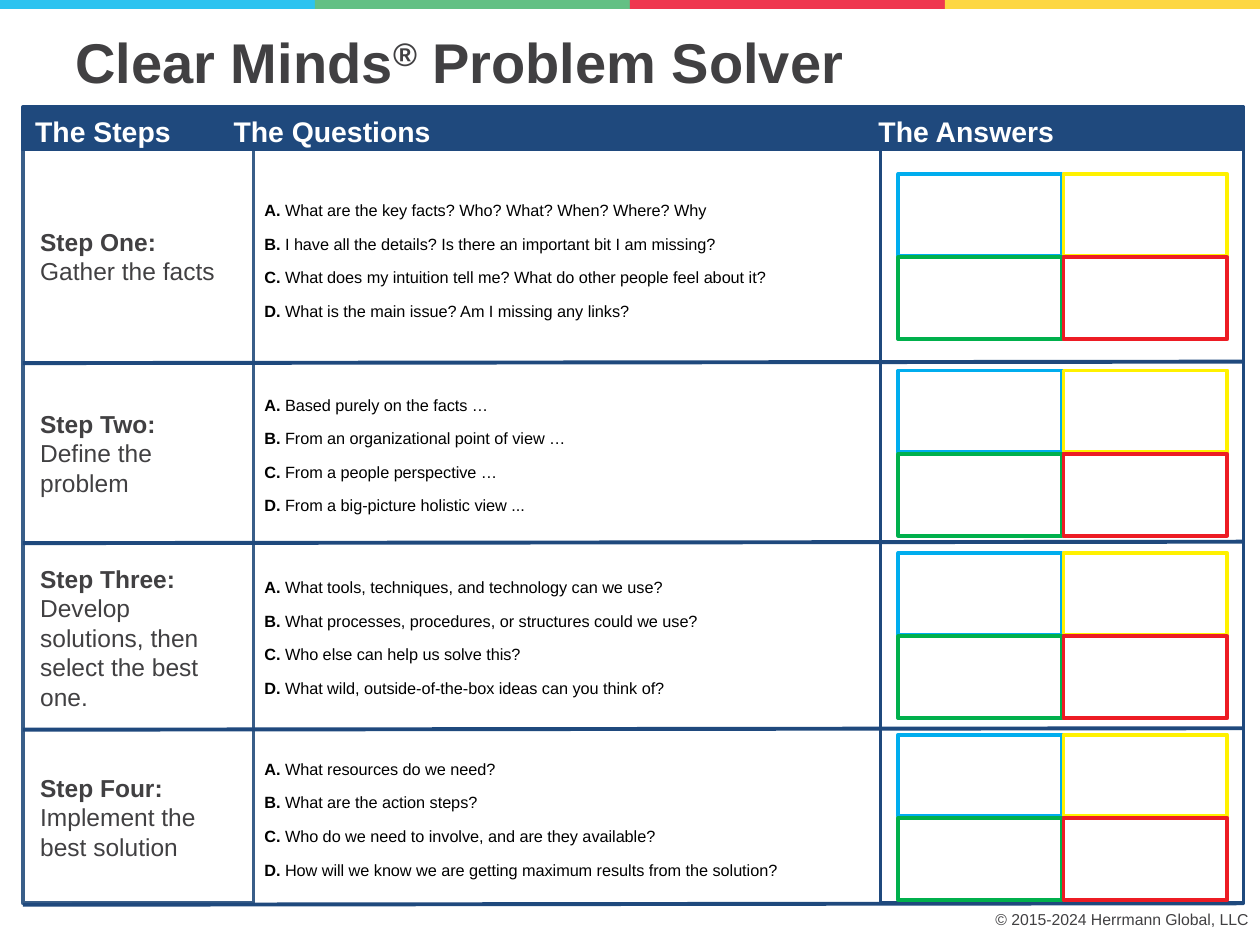
from dataclasses import dataclass
from lxml.etree import SubElement
from pptx import Presentation
from pptx.dml.color import RGBColor
from pptx.enum.shapes import MSO_CONNECTOR, MSO_SHAPE
from pptx.enum.text import MSO_ANCHOR, PP_ALIGN
from pptx.oxml.ns import qn
from pptx.util import Cm, Pt


@dataclass(frozen=True)
class Theme:
    font: str = "Arial"
    navy: str = "1F497D"
    steel: str = "395E89"
    grey: str = "414042"
    black: str = "000000"
    white: str = "FFFFFF"
    bands: tuple = ("2CC3F0", "63C084", "EF374F", "FDD742")
    quads: tuple = ("00ADEE", "FFF100", "00B04C", "ED1C24")
    title: int = 32
    head: int = 28
    ask: int = 16
    step: int = 14
    foot: int = 9
    edge: float = 2
    rule: float = 2.25


STEPS = [
    dict(name="Step One:", goal="Gather the facts",
         cell=(3.05, 4.45, 4.24), ask=(3.94, 2.77), quad=3.51, rule=7.32,
         asks=["What are the key facts? Who? What? When? Where? Why",
               "I have all the details? Is there an important bit I am missing?",
               "What does my intuition tell me? What do other people feel about it?",
               "What is the main issue? Am I missing any links?"]),
    dict(name="Step Two:", goal="Define the problem",
         cell=(7.32, 4.45, 3.63), ask=(7.75, 3), quad=7.47, rule=10.95,
         asks=["Based purely on the facts …",
               "From an organizational point of view …",
               "From a people perspective …",
               "From a big-picture holistic view ..."]),
    dict(name="Step Three:", goal="Develop solutions, then select the best one.",
         cell=(10.92, 4.45, 3.86), ask=(11.43, 3), quad=11.15, rule=14.71,
         asks=["What tools, techniques, and technology can we use?",
               "What processes, procedures, or structures could we use?",
               "Who else can help us solve this?",
               "What wild, outside-of-the-box ideas can you think of?"]),
    dict(name="Step Four:", goal="Implement the best solution",
         cell=(14.73, 4.29, 3.48), ask=(15.09, 3), quad=14.81, rule=18.24,
         asks=["What resources do we need?",
               "What are the action steps?",
               "Who do we need to involve, and are they available?",
               "How will we know we are getting maximum results from the solution?"]),
]


def write(text, para, size, color, font, bold=False, base=0):
    run = para.add_run()
    run.text = text
    run.font.size = Pt(size)
    run.font.name = font
    run.font.bold = bold
    run.font.color.rgb = RGBColor.from_string(color)
    if base:
        run.font._element.set("baseline", str(base * 1000))


class Board:
    """Draw themed elements on the current slide."""

    def __init__(self, slide, theme):
        self.slide = slide
        self.theme = theme

    def rect(self, x, y, w, h, fill, line=None, width=0):
        box = self.slide.shapes.add_shape(
            MSO_SHAPE.RECTANGLE, Cm(x), Cm(y), Cm(w), Cm(h))
        box.shadow.inherit = False
        box.fill.solid()
        box.fill.fore_color.rgb = RGBColor.from_string(fill)
        if line:
            box.line.color.rgb = RGBColor.from_string(line)
            box.line.width = Pt(width)
        else:
            box.line.fill.background()

    def rule(self, x, y, end, rise):
        line = self.slide.shapes.add_connector(
            MSO_CONNECTOR.STRAIGHT, Cm(x), Cm(y), Cm(end), Cm(y - rise))
        line.line.color.rgb = RGBColor.from_string(self.theme.navy)
        line.line.width = Pt(self.theme.rule)
        SubElement(line._element.spPr, qn("a:effectLst"))

    def text(self, x, y, w, h, lines, size, color, anchor=MSO_ANCHOR.TOP,
             align=PP_ALIGN.LEFT, pad=(0.25, 0.13), tabs=()):
        frame = self.slide.shapes.add_textbox(Cm(x), Cm(y), Cm(w), Cm(h)).text_frame
        frame.word_wrap = True
        frame.vertical_anchor = anchor
        frame.margin_left = frame.margin_right = Cm(pad[0])
        frame.margin_top = frame.margin_bottom = Cm(pad[1])
        for i, line in enumerate(lines):
            para = frame.add_paragraph() if i else frame.paragraphs[0]
            para.alignment = align
            if tabs:
                stops = SubElement(para._p.get_or_add_pPr(), qn("a:tabLst"))
                for tab in tabs:
                    SubElement(stops, qn("a:tab"), pos=str(Cm(tab)), algn="l")
            for text, bold, base in line:
                write(text, para=para, size=size, color=color,
                      font=self.theme.font, bold=bold, base=base)

    def quad(self, x, y):
        for i, color in enumerate(self.theme.quads):
            row, col = divmod(i, 2)
            self.rect(x + col * 3.33, y + row * 1.68, 3.3, 1.65,
                      self.theme.white, color, self.theme.rule)


def main():
    theme = Theme()
    deck = Presentation()
    deck.slide_width, deck.slide_height = Cm(25.4), Cm(19.05)
    board = Board(deck.slides.add_slide(deck.slide_layouts[6]), theme)

    for i, color in enumerate(theme.bands):
        board.rect(i * 6.35, 0, 6.35, 0.18, color)
    board.text(19.33, 18.24, 6.07, 0.61,
               [[("© 2015-2024 Herrmann Global, LLC", False, 0)]],
               theme.foot, theme.grey, align=PP_ALIGN.RIGHT, pad=(0.23, 0.1))
    board.rect(0.46, 2.21, 4.65, 16, theme.white, theme.steel, theme.edge)
    board.rect(17.75, 2.21, 7.32, 16, theme.white, theme.navy, theme.edge)
    board.text(1.27, 0.43, 22.86, 2.36,
               [[("Clear Minds", True, 0), ("®", True, 30),
                 (" Problem Solver", True, 0)]], theme.title, theme.grey)
    board.rect(0.46, 2.16, 24.61, 0.86, theme.navy, theme.navy, theme.edge)
    board.text(0.46, 2.06, 24.1, 1.45,
               [[("The Steps\tThe Questions\tThe Answers", True, 30)]],
               theme.head, theme.white, tabs=(4, 17))

    for step in STEPS:
        top, wide, high = step["cell"]
        board.text(0.56, top, wide, high,
                   [[(step["name"], True, 0)], [(step["goal"], False, 0)]],
                   theme.step, theme.grey, MSO_ANCHOR.MIDDLE)
        top, high = step["ask"]
        board.text(5.08, top, 12.7, high,
                   [[(f"{mark}. ", True, 30), (ask, False, 30)]
                    for mark, ask in zip("ABCD", step["asks"])],
                   theme.ask, theme.black, MSO_ANCHOR.MIDDLE)
        board.rule(0.46, step["rule"], 25.07, 0.03)
        board.quad(18.11, step["quad"])

    deck.save("out.pptx")


if __name__ == "__main__":
    main()
